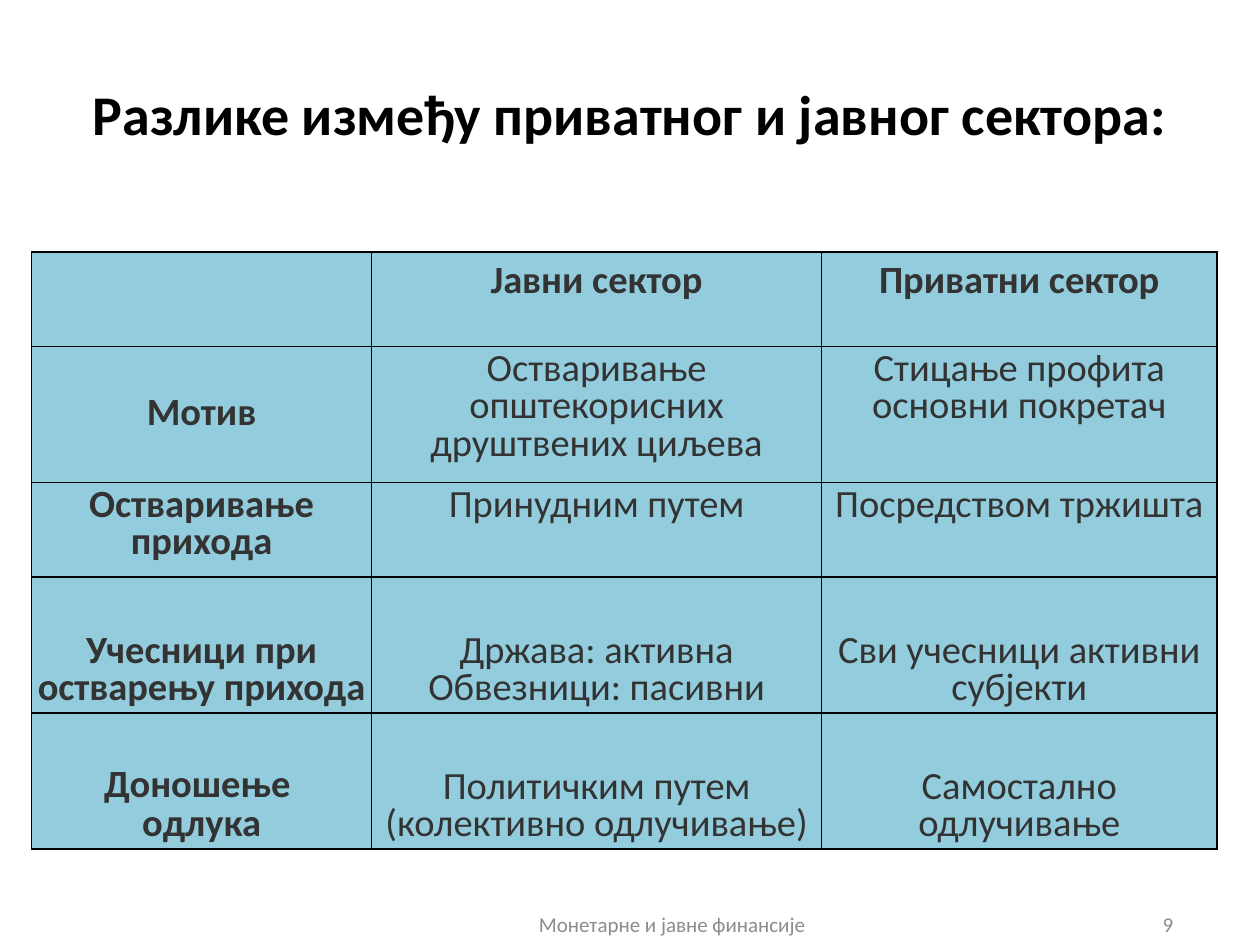
from lxml.etree import SubElement
from pptx import Presentation
from pptx.dml.color import RGBColor
from pptx.enum.text import MSO_ANCHOR, PP_ALIGN
from pptx.oxml.ns import qn
from pptx.util import Inches, Pt

HEADER = ["", "Јавни сектор", "Приватни сектор"]
# Each row: height, anchor of the label, anchor of the answers, texts
ROWS = [
    (1.08, MSO_ANCHOR.MIDDLE, MSO_ANCHOR.TOP,
     ["Мотив", "Остваривање општекорисних друштвених циљева",
      "Стицање профита основни покретач"]),
    (0.75, MSO_ANCHOR.TOP, MSO_ANCHOR.TOP,
     ["Остваривање прихода", "Принудним путем", "Посредством тржишта"]),
    (1.08, MSO_ANCHOR.BOTTOM, MSO_ANCHOR.BOTTOM,
     ["Учесници при остварењу прихода", "Држава: активна Обвезници: пасивни",
      "Сви учесници активни субјекти"]),
    (1.08, MSO_ANCHOR.BOTTOM, MSO_ANCHOR.BOTTOM,
     ["Доношење \nодлука", "Политичким путем (колективно одлучивање)",
      "Самостално одлучивање"]),
]


def color(value):
    return RGBColor.from_string(value)


class SectorSlide:
    font = "Calibri"
    ink = "333333"
    muted = "8C8C8C"
    fill = "93CDDD"
    border = "000000"

    def __init__(self, deck):
        self.page = deck.slides.add_slide(deck.slide_layouts[6])

    def fill_frame(self, frame, text, size, ink, bold=False,
                   align=PP_ALIGN.CENTER, spacing=None):
        frame.word_wrap = True
        for index, line in enumerate(text.split("\n")):
            para = frame.add_paragraph() if index else frame.paragraphs[0]
            para.text = line
            para.alignment = align
            if spacing:
                para.line_spacing = spacing
            if index:
                para.space_before = Pt(size * 0.05)
            para.font.name = self.font
            para.font.size = Pt(size)
            para.font.bold = bold
            para.font.color.rgb = color(ink)

    def text(self, left, top, width, height, text, size, ink,
             anchor=MSO_ANCHOR.MIDDLE, **style):
        box = self.page.shapes.add_textbox(
            Inches(left), Inches(top), Inches(width), Inches(height))
        box.text_frame.vertical_anchor = anchor
        self.fill_frame(box.text_frame, text, size, ink, **style)

    def outline(self, cell):
        properties = cell._tc.get_or_add_tcPr()
        for index, side in enumerate(("a:lnL", "a:lnR", "a:lnT", "a:lnB")):
            line = properties.makeelement(qn(side), {"w": str(Pt(1))})
            solid = SubElement(line, qn("a:solidFill"))
            SubElement(solid, qn("a:srgbClr"), {"val": self.border})
            properties.insert(index, line)

    def cell(self, cell, text, bold, anchor, spacing=None):
        cell.fill.solid()
        cell.fill.fore_color.rgb = color(self.fill)
        self.outline(cell)
        cell.margin_left = cell.margin_right = Inches(0.04)
        cell.margin_top = cell.margin_bottom = Inches(0.04)
        cell.vertical_anchor = anchor
        self.fill_frame(cell.text_frame, text, 22, self.ink, bold,
                        spacing=spacing)

    def table(self, left, top, widths, header_height, header, rows):
        heights = [header_height] + [row[0] for row in rows]
        table = self.page.shapes.add_table(
            len(heights), len(widths), Inches(left), Inches(top),
            Inches(sum(widths)), Inches(sum(heights))).table
        for column, width in zip(table.columns, widths):
            column.width = Inches(width)
        for row, height in zip(table.rows, heights):
            row.height = Inches(height)
        for column, text in enumerate(header):
            self.cell(table.cell(0, column), text, True, MSO_ANCHOR.TOP)
        for number, (_, label_anchor, anchor, texts) in enumerate(rows, 1):
            for column, text in enumerate(texts):
                is_label = column == 0
                self.cell(table.cell(number, column), text, is_label,
                          label_anchor if is_label else anchor, spacing=0.8)


def main():
    deck = Presentation()
    deck.slide_width, deck.slide_height = Inches(10), Inches(7.5)
    slide = SectorSlide(deck)

    # Title
    slide.text(0.25, 0.58, 9.5, 0.83,
               "Разлике између приватног и јавног сектора:", 32, "000000",
               anchor=MSO_ANCHOR.TOP, bold=True)

    # Comparison of the sectors
    slide.table(0.25, 2, [2.7, 3.57, 3.14], 0.75, HEADER, ROWS)

    # Footer and page number
    slide.text(3.75, 7.17, 3.17, 0.33, "Монетарне и јавне финансије",
               12, slide.muted)
    slide.text(7.33, 7.17, 2.08, 0.33, "9", 12, slide.muted,
               align=PP_ALIGN.RIGHT)

    deck.save("out.pptx")


if __name__ == "__main__":
    main()
